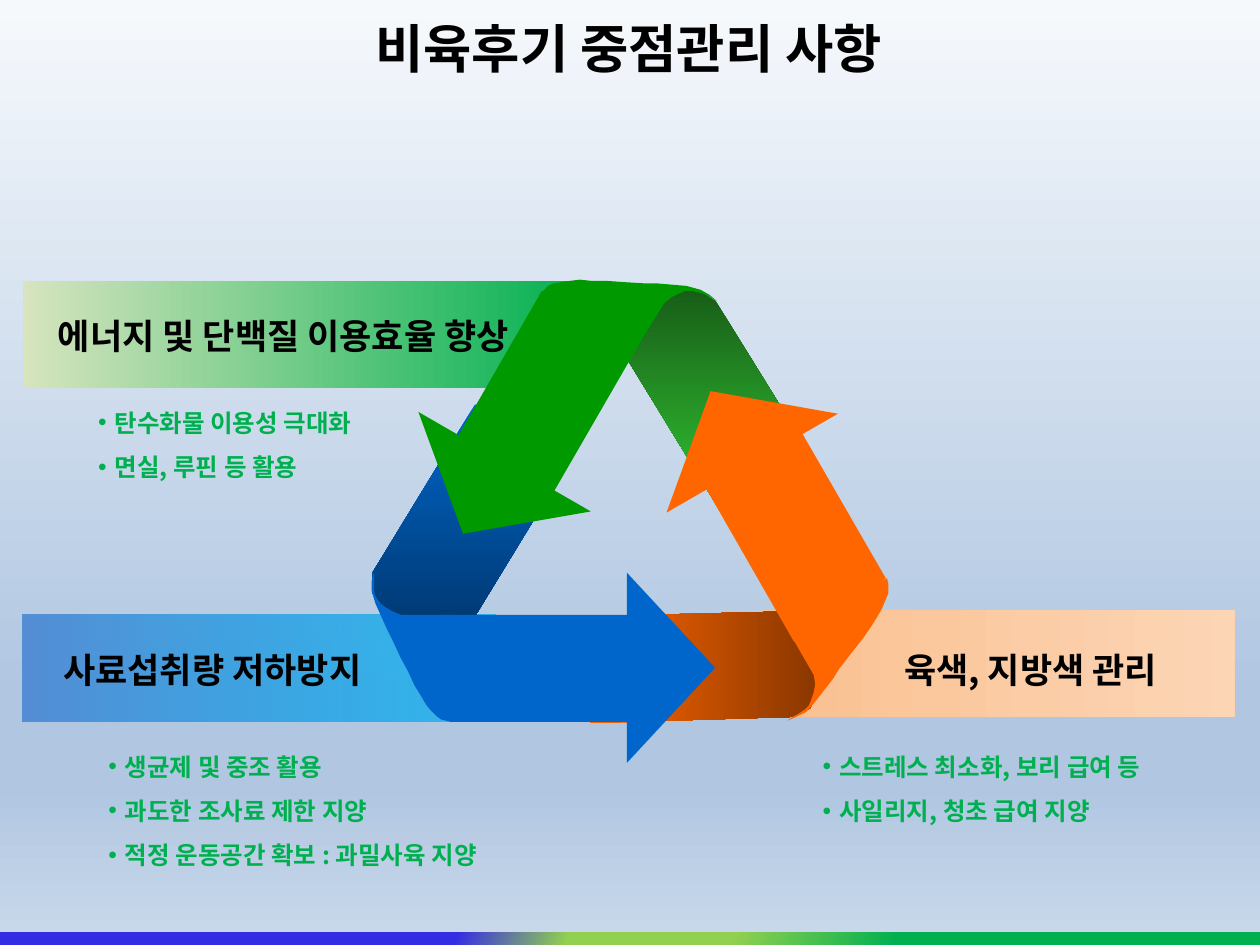
from dataclasses import dataclass

import pptx
import pptx.dml.color
import pptx.enum.shapes
import pptx.enum.text
import pptx.oxml
import pptx.oxml.ns
import pptx.util
from lxml import etree

COLUMNS, ROWS = 1000, 750
CELL = pptx.util.Inches(10) // COLUMNS
FONT = "Noto Sans CJK KR"
SHAPE = pptx.enum.shapes.MSO_SHAPE
ALIGN = pptx.enum.text.PP_ALIGN
qn = pptx.oxml.ns.qn

COLORS = {
    "black": "000000", "green": "009900", "orange": "FF6600", "blue": "0066CC",
    "leaf": "00B050", "lime": "92D050", "indigo": "342BE5",
    "pale green": "D7E4BD", "peach": "FAC090", "pale peach": "FCD5B5",
    "steel": "558ED5", "sky": "00B0F0",
    "navy": "002F5E", "forest": "185E18", "bright green": "33CC33", "brown": "762F00",
    "sky top": "F6F9FC", "sky low": "B0C6E1", "sky bottom": "CAD9EB",
}


@dataclass(frozen=True)
class Gradient:
    """Stops are (percent, colour name, optional opacity percent)."""
    stops: tuple
    angle: int = 0


@dataclass(frozen=True)
class Block:
    """A preset shape placed in grid cells."""
    area: tuple
    fill: object
    preset: object = SHAPE.RECTANGLE
    rotation: int = 0


@dataclass(frozen=True)
class Outline:
    """A polygon with its corners in grid cells."""
    points: tuple
    fill: object


@dataclass(frozen=True)
class Caption:
    area: tuple
    lines: tuple
    size: int = 20
    color: str = "black"
    bulleted: bool = False


def head(area: tuple, rotation: int, fill: str) -> Block:
    return Block(area, fill, SHAPE.ISOSCELES_TRIANGLE, rotation)


BACKGROUND = Gradient(((0, "sky top"), (74, "sky low"), (83, "sky low"), (100, "sky bottom")), 90)

BANDS = (
    Block((18, 223, 452, 85), Gradient(((0, "pale green"), (100, "leaf")))),
    Block((605, 484, 375, 85), Gradient(((0, "peach"), (100, "pale peach")))),
    Block((18, 488, 375, 85), Gradient(((0, "steel"), (100, "sky", 71)))),
)

CYCLE = (
    # folded backs of the blue and green arrows
    Outline(((454, 363), (349, 535), (295, 470), (296, 454), (377, 321)),
            Gradient(((0, "blue"), (100, "navy")), 90)),
    Outline(((578, 416), (469, 238), (554, 230), (568, 239), (652, 375)),
            Gradient(((0, "forest"), (100, "bright green")), 90)),
    # green: head, shaft, curl
    head((305, 362, 158, 66), 210, "green"),
    Outline(((427, 412), (509, 270), (470, 247), (430, 231), (351, 368)), "green"),
    Outline(((504, 278), (428, 234), (431, 231), (435, 227), (439, 225), (445, 224), (452, 223),
             (460, 222), (470, 223), (482, 223), (496, 224), (513, 225), (522, 225), (545, 227),
             (556, 230), (563, 234), (569, 239), (564, 236), (558, 233), (550, 231), (544, 231),
             (539, 233), (533, 236), (527, 241), (522, 249)), "green"),
    # orange: folded back, head, shaft, curl
    Outline(((470, 489), (678, 484), (643, 562), (629, 569), (468, 574)),
            Gradient(((0, "orange"), (100, "brown")))),
    head((502, 306, 157, 66), 330, "orange"),
    Outline(((548, 366), (630, 509), (669, 486), (703, 459), (624, 322)), "orange"),
    Outline(((627, 503), (704, 459), (705, 463), (705, 471), (703, 476), (700, 483), (696, 490),
             (691, 498), (684, 508), (676, 518), (666, 531), (661, 539), (647, 557), (640, 565),
             (632, 569), (625, 572), (629, 569), (633, 567), (639, 563), (642, 560), (644, 555),
             (646, 549), (647, 543), (646, 536), (642, 529)), "orange"),
    # blue: curl, head, shaft
    Outline(((358, 488), (358, 573), (354, 572), (350, 571), (346, 568), (342, 564), (338, 559),
             (334, 552), (329, 544), (324, 533), (318, 522), (311, 507), (307, 499), (298, 479),
             (295, 469), (295, 461), (297, 453), (297, 469), (298, 473), (301, 478), (306, 482),
             (311, 485), (318, 488), (326, 488)), "blue"),
    head((457, 495, 151, 70), 90, "blue"),
    Outline(((526, 488), (352, 488), (352, 532), (358, 573), (526, 573)), "blue"),
)

FOOTER = Block((0, 740, 1001, 13), Gradient(
    ((36, "indigo"), (45, "lime"), (52, "lime"), (58, "lime"), (71, "leaf")), 20))

TITLE = Caption((0, 8, 998, 61), ("비육후기 중점관리 사항",), 30)
CAPTIONS = (
    Caption((-28, 510, 393, 44), ("사료섭취량 저하방지",)),
    Caption((696, 510, 244, 44), ("육색, 지방색 관리",)),
    Caption((12, 245, 426, 44), ("에너지 및 단백질 이용효율 향상",)),
    Caption((67, 307, 260, 82), ("탄수화물 이용성 극대화", "면실, 루핀 등 활용"),
            14, "leaf", True),
    Caption((75, 580, 379, 117),
            ("생균제 및 중조 활용", "과도한 조사료 제한 지양", "적정 운동공간 확보 : 과밀사육 지양"),
            14, "leaf", True),
    Caption((642, 580, 323, 82), ("스트레스 최소화, 보리 급여 등", "사일리지, 청초 급여 지양"),
            14, "leaf", True),
)


def rgb(name: str) -> pptx.dml.color.RGBColor:
    return pptx.dml.color.RGBColor.from_string(COLORS[name])


def cells(area: tuple) -> list:
    return [value * CELL for value in area]


def apply_gradient(fill, owner, gradient: Gradient) -> None:
    """Give fill, found inside the owner element, the stops and clockwise angle."""
    fill.gradient()
    element = owner.find(".//" + qn("a:gradFill"))
    stop_list = element.find(qn("a:gsLst"))
    for old_stop in list(stop_list):
        stop_list.remove(old_stop)
    for percent, color, *opacity in gradient.stops:
        stop = etree.SubElement(stop_list, qn("a:gs"), pos=str(percent * 1000))
        shade = etree.SubElement(stop, qn("a:srgbClr"), val=COLORS[color])
        for share in opacity:
            etree.SubElement(shade, qn("a:alpha"), val=str(share * 1000))
    element.find(qn("a:lin")).set("ang", str(gradient.angle * 60000))


def paint(shape, fill) -> None:
    shape.shadow.inherit = False
    shape.line.fill.background()
    if isinstance(fill, Gradient):
        apply_gradient(shape.fill, shape._element.spPr, fill)
    else:
        shape.fill.solid()
        shape.fill.fore_color.rgb = rgb(fill)


def draw(slide, part) -> None:
    if isinstance(part, Outline):
        start, *rest = part.points
        builder = slide.shapes.build_freeform(*start, scale=CELL)
        builder.add_line_segments(rest, close=True)
        shape = builder.convert_to_shape()
    else:
        shape = slide.shapes.add_shape(part.preset, *cells(part.area))
        shape.rotation = part.rotation
    paint(shape, part.fill)


def add_bullet(paragraph) -> None:
    properties = paragraph._p.get_or_add_pPr()
    indent = 13 * CELL
    properties.set("marL", str(indent))
    properties.set("indent", str(-indent))
    etree.SubElement(properties, qn("a:buFont"), typeface="Arial")
    etree.SubElement(properties, qn("a:buChar"), char="•")


def write(shape, caption: Caption) -> None:
    shape.left, shape.top, shape.width, shape.height = cells(caption.area)
    frame = shape.text_frame
    frame.text = "\n".join(caption.lines)
    frame_format = {
        "word_wrap": True,
        "auto_size": pptx.enum.text.MSO_AUTO_SIZE.SHAPE_TO_FIT_TEXT,
        "vertical_anchor": pptx.enum.text.MSO_ANCHOR.TOP,
    }
    if caption.bulleted:
        frame_format |= {"margin_left": 11 * CELL, "margin_right": 11 * CELL}
    for name, value in frame_format.items():
        setattr(frame, name, value)
    for paragraph in frame.paragraphs:
        if caption.bulleted:
            paragraph.line_spacing = 1.5
            add_bullet(paragraph)
        else:
            paragraph.alignment = ALIGN.CENTER
        font = paragraph.runs[0].font
        for name, value in {"name": FONT, "size": pptx.util.Pt(caption.size), "bold": True}.items():
            setattr(font, name, value)
        font.color.rgb = rgb(caption.color)
        etree.SubElement(font._element, qn("a:ea"), typeface=FONT)


def main() -> None:
    deck = pptx.Presentation()
    deck.slide_width, deck.slide_height = COLUMNS * CELL, ROWS * CELL
    slide = deck.slides.add_slide(deck.slide_layouts[5])
    apply_gradient(slide.background.fill, slide._element, BACKGROUND)
    write(slide.shapes.title, TITLE)
    for part in (*BANDS, *CYCLE, FOOTER):
        draw(slide, part)
    for caption in CAPTIONS:
        write(slide.shapes.add_textbox(*cells(caption.area)), caption)
    deck.save("out.pptx")


if __name__ == "__main__":
    main()
